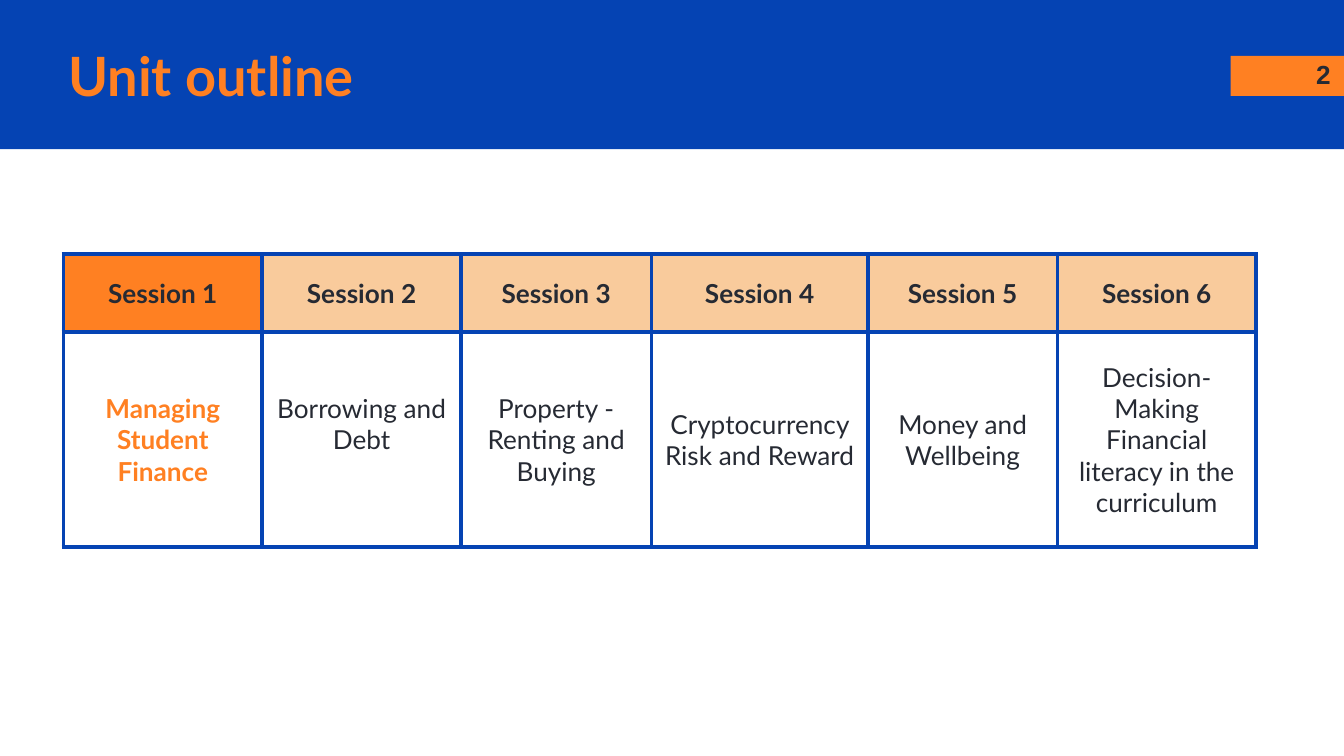
from dataclasses import dataclass

from lxml.etree import SubElement
from pptx import Presentation
from pptx.dml.color import RGBColor
from pptx.enum.shapes import MSO_SHAPE
from pptx.enum.text import MSO_ANCHOR, PP_ALIGN
from pptx.oxml.ns import qn
from pptx.util import Pt


@dataclass(frozen=True)
class Theme:
    """Colours, fonts and sizes of the slide."""
    blue: str = "0543B3"
    orange: str = "FF8022"
    peach: str = "F9CB9C"
    white: str = "FFFFFF"
    ink: str = "262A33"
    main: str = "Lato"
    plain: str = "Arial"
    title: float = 29
    body: float = 14
    inset: float = 7.2
    rule: float = 2.25


THEME = Theme()
WIDTHS = [106.5, 106.5, 102, 116, 101.5, 106.5]
HEIGHTS = [41.8, 115.2]
TOPICS = [
    "Managing Student Finance",
    "Borrowing and Debt",
    "Property - Renting and Buying",
    "Cryptocurrency Risk and Reward",
    "Money and Wellbeing",
    "Decision- Making\nFinancial literacy in the curriculum",
]


def write(frame, text, size=THEME.body, font=THEME.main, color=THEME.ink,
          bold=False, align=PP_ALIGN.LEFT):
    """Write each line of text as a paragraph in the given format."""
    frame.word_wrap = True
    for i, line in enumerate(text.split("\n")):
        para = frame.add_paragraph() if i else frame.paragraphs[0]
        para.alignment = align
        run = para.add_run()
        run.text = line
        run.font.size = Pt(size)
        run.font.name = font
        run.font.bold = bold
        run.font.color.rgb = RGBColor.from_string(color)


def pad(item, low=0):
    """Set equal insets, with extra room below if asked."""
    item.margin_left = item.margin_right = item.margin_top = Pt(THEME.inset)
    item.margin_bottom = Pt(THEME.inset + low)


def block(slide, box, color):
    """Draw a plain filled rectangle."""
    shape = slide.shapes.add_shape(MSO_SHAPE.RECTANGLE, *map(Pt, box))
    shape.shadow.inherit = False
    shape.fill.solid()
    shape.fill.fore_color.rgb = RGBColor.from_string(color)
    shape.line.fill.background()


def label(slide, box, text, anchor=MSO_ANCHOR.TOP, **style):
    """Place a text box."""
    frame = slide.shapes.add_textbox(*map(Pt, box)).text_frame
    pad(frame)
    frame.vertical_anchor = anchor
    write(frame, text, **style)


def header(slide, box, title, number):
    """Draw the title band with its page number tab."""
    left, top, width, height = box
    right = left + width
    block(slide, box, THEME.blue)
    block(slide, (right - 60.8, top + 30, 60.8, 21.4), THEME.orange)
    label(slide, (right - 43.2, top + 24, 43.2, 31), number,
          font=THEME.plain, bold=True, align=PP_ALIGN.RIGHT)
    label(slide, (left + 29.6, top + 20, 609, 40.4), title,
          anchor=MSO_ANCHOR.MIDDLE, size=THEME.title, color=THEME.orange,
          bold=True)


def edge(cell):
    """Rule all four sides of a cell."""
    props = cell._tc.get_or_add_tcPr()
    for side in "LRTB":
        line = SubElement(props, qn(f"a:ln{side}"), w=str(Pt(THEME.rule)))
        fill = SubElement(line, qn("a:solidFill"))
        SubElement(fill, qn("a:srgbClr"), val=THEME.blue)


def fill_cell(cell, text, fill, low=0, **style):
    """Format one table cell and write its text."""
    edge(cell)
    cell.fill.solid()
    cell.fill.fore_color.rgb = RGBColor.from_string(fill)
    cell.vertical_anchor = MSO_ANCHOR.MIDDLE
    pad(cell, low)
    write(cell.text_frame, text, align=PP_ALIGN.CENTER, **style)


def outline(slide, box, topics):
    """Draw the table of sessions, with the first one marked."""
    table = slide.shapes.add_table(2, len(topics), *map(Pt, box)).table
    table.first_row = table.horz_banding = False
    for col, width in zip(table.columns, WIDTHS):
        col.width = Pt(width)
    for row, height in zip(table.rows, HEIGHTS):
        row.height = Pt(height)
    for i, topic in enumerate(topics):
        now = i == 0
        fill_cell(table.cell(0, i), f"Session {i + 1}",
                  THEME.orange if now else THEME.peach, bold=True)
        fill_cell(table.cell(1, i), topic, THEME.white,
                  low=16.8 if i == 1 else 0, bold=now,
                  color=THEME.orange if now else THEME.ink)


def main():
    """Build and save the slide."""
    deck = Presentation()
    deck.slide_width, deck.slide_height = Pt(720), Pt(405)
    slide = deck.slides.add_slide(deck.slide_layouts[6])
    header(slide, (0, 0, 720, 80), "Unit outline", "2")
    outline(slide, (34, 136.2, sum(WIDTHS), sum(HEIGHTS)), TOPICS)
    deck.save("out.pptx")


if __name__ == "__main__":
    main()
